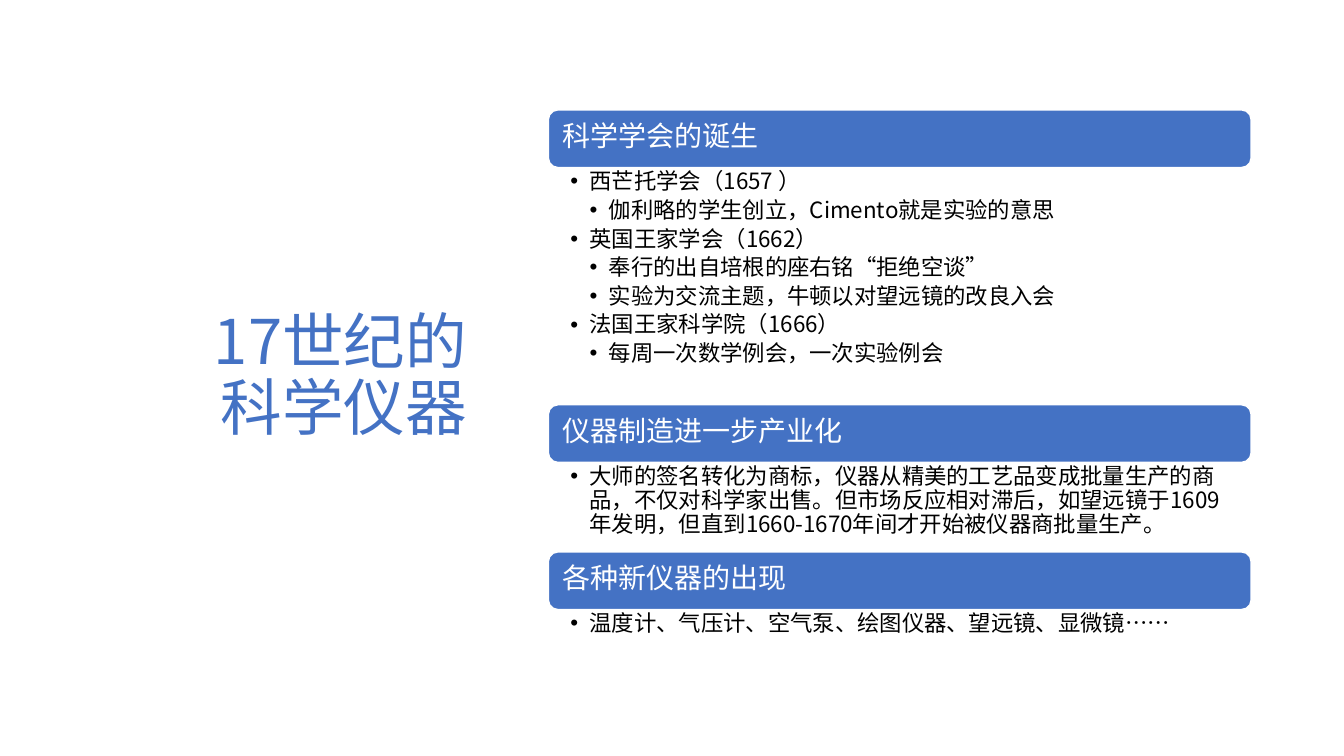
from dataclasses import dataclass
from lxml.etree import SubElement
from pptx import Presentation
from pptx.dml.color import RGBColor
from pptx.enum.shapes import MSO_SHAPE
from pptx.enum.text import MSO_ANCHOR, MSO_AUTO_SIZE, PP_ALIGN
from pptx.oxml.ns import qn
from pptx.util import Pt


@dataclass(frozen=True)
class Theme:
    face: str = "Noto Sans CJK SC"
    blue: str = "4472C4"
    white: str = "FFFFFF"
    black: str = "000000"
    title: float = 44
    head: float = 20
    body: float = 16


@dataclass(frozen=True)
class Part:
    head: str
    items: list[tuple[int, str]]
    high: float


THEME = Theme()
LEFT, TOP, WIDE, BAR = 391.7, 78.5, 502, 41.2
STEP = 13.7  # indent of each list level

PARTS = [
    Part("科学学会的诞生", [
        (1, "西芒托学会（1657 ）"),
        (2, "伽利略的学生创立，Cimento就是实验的意思"),
        (1, "英国王家学会（1662）"),
        (2, "奉行的出自培根的座右铭“拒绝空谈”"),
        (2, "实验为交流主题，牛顿以对望远镜的改良入会"),
        (1, "法国王家科学院（1666）"),
        (2, "每周一次数学例会，一次实验例会"),
    ], 169.4),
    Part("仪器制造进一步产业化", [
        (1, "大师的签名转化为商标，仪器从精美的工艺品变成批量生产的商品，"
            "不仅对科学家出售。但市场反应相对滞后，如望远镜于1609年发明，"
            "但直到1660-1670年间才开始被仪器商批量生产。"),
    ], 63.9),
    Part("各种新仪器的出现", [
        (1, "温度计、气压计、空气泵、绘图仪器、望远镜、显微镜……"),
    ], 26),
]


def place(shape, left: float, top: float, wide: float, high: float) -> None:
    shape.left, shape.top = Pt(left), Pt(top)
    shape.width, shape.height = Pt(wide), Pt(high)


def frame(shape, anchor: MSO_ANCHOR, pads: tuple[float, ...]):
    text = shape.text_frame
    text.word_wrap = True
    text.auto_size = MSO_AUTO_SIZE.NONE
    text.vertical_anchor = anchor
    text.margin_left, text.margin_top, text.margin_right, text.margin_bottom = map(Pt, pads)
    return text


def style(para, size: float, tint: str, align: PP_ALIGN = PP_ALIGN.LEFT) -> None:
    para.alignment = align
    para.line_spacing = 0.9
    para.space_before = Pt(0)
    font = para.font
    font.size, font.bold = Pt(size), False
    font.color.rgb = RGBColor.from_string(tint)
    font.name = THEME.face
    # East Asian glyphs need their own typeface entry
    base = para._p.pPr.find(qn("a:defRPr"))
    SubElement(base, qn("a:ea")).set("typeface", THEME.face)


def bullet(para, level: int) -> None:
    para.level = level
    props = para._p.get_or_add_pPr()
    props.set("marL", str(Pt(STEP * level)))
    props.set("indent", str(-Pt(STEP)))
    SubElement(props, qn("a:buFont")).set("typeface", "Arial")
    SubElement(props, qn("a:buChar")).set("char", "•")


def header(slide, part: Part, top: float) -> None:
    bar = slide.shapes.add_shape(
        MSO_SHAPE.ROUNDED_RECTANGLE, Pt(LEFT), Pt(top), Pt(WIDE), Pt(BAR))
    bar.shadow.inherit = False
    bar.fill.solid()
    bar.fill.fore_color.rgb = RGBColor.from_string(THEME.blue)
    bar.line.color.rgb = RGBColor.from_string(THEME.white)
    bar.line.width = Pt(1)
    text = frame(bar, MSO_ANCHOR.MIDDLE, (8, 5, 8, 7))
    text.text = part.head
    style(text.paragraphs[0], THEME.head, THEME.white)


def listing(holder, part: Part, top: float) -> None:
    place(holder, LEFT, top, WIDE, part.high)
    text = frame(holder, MSO_ANCHOR.TOP, (15.8, 2, 11.4, 2))
    text.text = "\n".join(words for _, words in part.items)
    for para, (level, _) in zip(text.paragraphs, part.items):
        bullet(para, level)
        style(para, THEME.body, THEME.black)
        para.space_after = Pt(THEME.body * 0.2)


def main() -> None:
    deck = Presentation()
    deck.slide_width, deck.slide_height = Pt(960), Pt(540)
    # The comparison layout offers a title and four body placeholders
    slide = deck.slides.add_slide(deck.slide_layouts[4])
    title, *bodies = slide.placeholders

    # Title
    place(title, 66, 75.6, 275, 388)
    text = frame(title, MSO_ANCHOR.MIDDLE, (7.2, 3.6, 7.2, 3.6))
    text.text = "17世纪的\v科学仪器"
    style(text.paragraphs[0], THEME.title, THEME.blue, PP_ALIGN.RIGHT)

    # Stacked headers and lists
    top = TOP
    for part, body in zip(PARTS, bodies):
        header(slide, part, top)
        listing(body, part, top + BAR)
        top += BAR + part.high

    # Unused placeholder
    for spare in bodies[len(PARTS):]:
        spare.element.getparent().remove(spare.element)

    deck.save("out.pptx")


if __name__ == "__main__":
    main()
